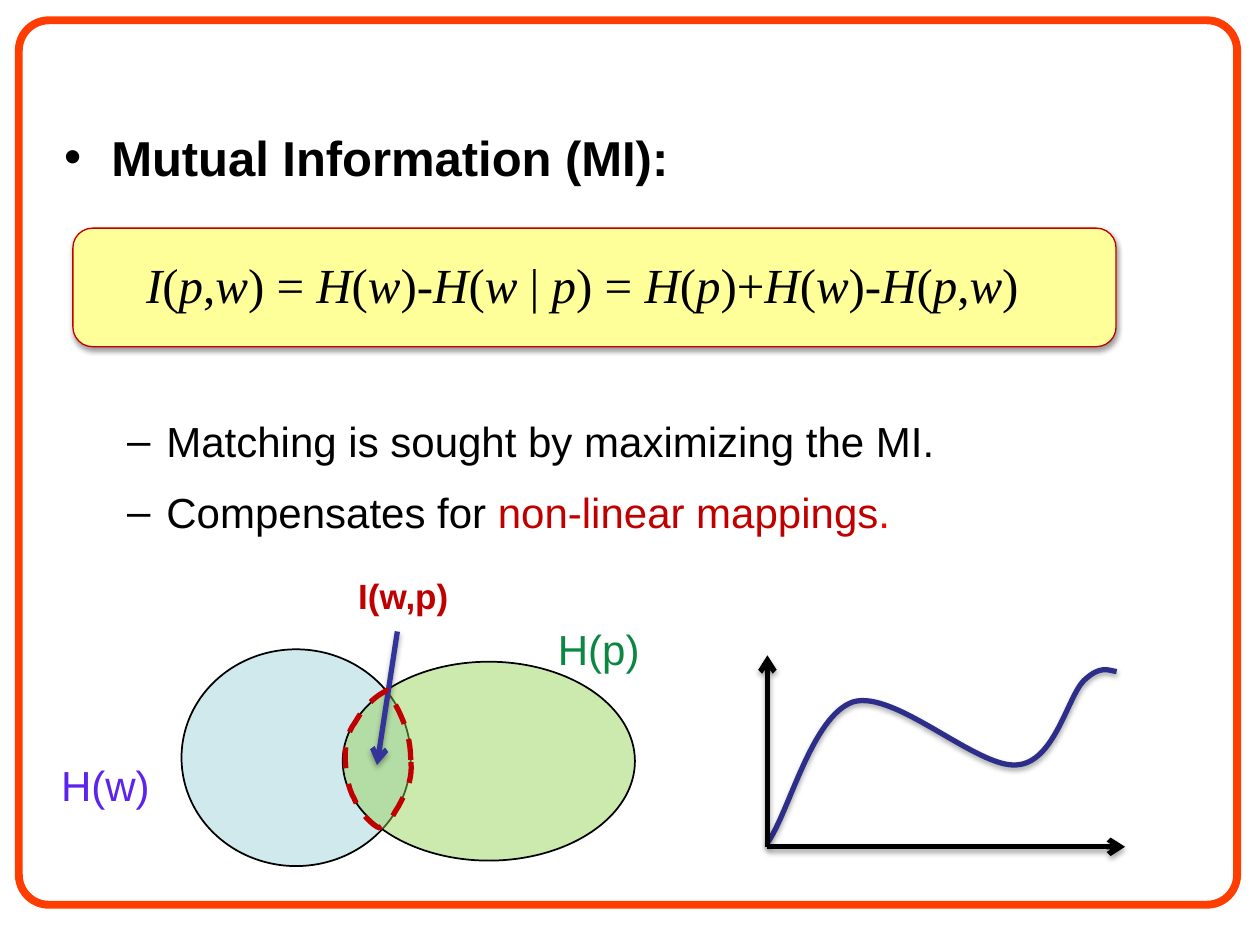
from dataclasses import dataclass
from itertools import groupby

from lxml import etree
from pptx import Presentation
from pptx import util as u
from pptx.dml.color import RGBColor
from pptx.enum import dml, shapes, text
from pptx.oxml import ns


@dataclass(frozen=True)
class Theme:
    """Colours, fonts and sizes of the slide."""
    ink: str = "000000"
    frame: str = "FF3D01"
    accent: str = "C00000"
    stop: str = "FF0000"
    panel: str = "FFFF99"
    word: str = "5D23ED"
    pixel: str = "0B8743"
    word_fill: str = "BBE0E3"
    pixel_fill: str = "92D050"
    curve: str = "2D2D8A"
    pointer: str = "333399"
    sans: str = "Arial"
    serif: str = "Times New Roman"
    heading: int = 28
    body: int = 24
    small: int = 20
    thick: float = 3


THEME = Theme()


def rgb(code):
    """Turn a hex code into a colour."""
    return RGBColor.from_string(code)


def sub(parent, tag, **attributes):
    """Append a drawing element to a parent."""
    return etree.SubElement(parent, ns.qn(f"a:{tag}"), {k: str(v) for k, v in attributes.items()})


def cast_shadow(item, alpha=None, distance=1.8):
    """Give an item a downward shadow, or none without alpha."""
    properties = item._element.spPr
    for effects in properties.findall(ns.qn("a:effectLst")):
        properties.remove(effects)
    effects = sub(properties, "effectLst")
    if alpha:
        shadow = sub(effects, "outerShdw", blurRad=u.Pt(3.1), dist=u.Pt(distance),
                     dir=90 * 60000, rotWithShape=0)
        sub(sub(shadow, "srgbClr", val=THEME.ink), "alpha", val=alpha * 1000)


def outline(item, color, width):
    """Set the line colour and width of an item."""
    item.line.color.rgb = rgb(color)
    item.line.width = u.Pt(width)


def write(paragraph, content, size=THEME.body, color=THEME.ink, font=THEME.sans,
          bold=False, italic=False):
    """Add a formatted run to a paragraph."""
    run = paragraph.add_run()
    run.text = content
    run.font.size, run.font.name = u.Pt(size), font
    run.font.bold, run.font.italic = bold, italic
    run.font.color.rgb = rgb(color)


def add_label(slide, box, wrap=False):
    """Add a centred text box and return its paragraph."""
    frame = slide.shapes.add_textbox(*map(u.Cm, box)).text_frame
    frame.word_wrap = wrap
    frame.paragraphs[0].alignment = text.PP_ALIGN.CENTER
    return frame.paragraphs[0]


def add_panel(slide, kind, box, color, width, fill=None, opacity=100):
    """Add a preset shape with an outline and an optional fill."""
    panel = slide.shapes.add_shape(kind, *map(u.Cm, box))
    panel.shadow.inherit = False
    if fill:
        panel.fill.solid()
        panel.fill.fore_color.rgb = rgb(fill)
        if opacity < 100:
            tint = panel._element.spPr.find(f".//{ns.qn('a:srgbClr')}")
            sub(tint, "alpha", val=opacity * 1000)
    else:
        panel.fill.background()
    outline(panel, color, width)
    return panel


def add_arrow(slide, start, end, color):
    """Add an arrow with a soft shadow."""
    arrow = slide.shapes.add_connector(shapes.MSO_CONNECTOR.STRAIGHT, *map(u.Cm, start + end))
    outline(arrow, color, THEME.thick)
    sub(arrow.line._get_or_add_ln(), "tailEnd", type="arrow")
    cast_shadow(arrow, 35)


def add_curve(slide, left, top, points, color, close=False):
    """Draw a Bezier outline from a start point and triples of points."""
    start, *rest = [(u.Cm(left + x), u.Cm(top + y)) for x, y in points]
    builder = slide.shapes.build_freeform(*start)
    builder.add_line_segments(rest, close=close)
    curve = builder.convert_to_shape()
    segments = list(curve._element.iter(ns.qn("a:lnTo")))
    for first, second, third in zip(*[iter(segments)] * 3):
        bezier = etree.Element(ns.qn("a:cubicBezTo"))
        first.addprevious(bezier)
        for segment in (first, second, third):
            bezier.append(segment[0])
            segment.getparent().remove(segment)
    curve.fill.background()
    outline(curve, color, THEME.thick)
    cast_shadow(curve)
    return curve


def add_frame(slide, box):
    """Draw the rounded border of the slide."""
    border = add_panel(slide, shapes.MSO_SHAPE.ROUNDED_RECTANGLE, box, THEME.frame, 4.5)
    border.adjustments[0] = 0.034


def fill_body(slide, box):
    """Fill the body placeholder with the heading and its points."""
    body = slide.placeholders[1]
    body.left, body.top, body.width, body.height = map(u.Cm, box)
    frame = body.text_frame
    frame.auto_size = text.MSO_AUTO_SIZE.NONE
    heading, matching, mappings = [frame.paragraphs[0]] + [frame.add_paragraph() for _ in range(2)]
    rows = ((heading, 0, "•", 0.95, -0.95, 6), (matching, 1, "–", 2.06, -0.79, 125),
            (mappings, 1, "–", 2.06, -0.79, 6))
    for paragraph, level, bullet, margin, indent, before in rows:
        paragraph.level = level
        paragraph.space_before, paragraph.space_after = u.Pt(before), u.Pt(6)
        properties = paragraph._p.get_or_add_pPr()
        properties.set("marL", str(u.Cm(margin)))
        properties.set("indent", str(u.Cm(indent)))
        sub(properties, "buChar", char=bullet)
    write(heading, "Mutual Information (MI):", size=THEME.heading, bold=True)
    write(matching, "Matching is sought by maximizing the MI.")
    write(mappings, "Compensates for ")
    write(mappings, "non-linear mappings", color=THEME.accent)
    write(mappings, ".", color=THEME.stop)


def add_formula(slide, box):
    """Set the formula on its highlighted panel, variables in italics."""
    left, top, width, height = box
    panel = add_panel(slide, shapes.MSO_SHAPE.ROUNDED_RECTANGLE, box, THEME.accent, 0.75, THEME.panel)
    cast_shadow(panel, 38, 1.6)
    formula = add_label(slide, (left - 0.17, top + 0.4, width - 0.15, 1.45), wrap=True)
    for variable, part in groupby("I(p,w) = H(w)-H(w | p) = H(p)+H(w)-H(p,w)", str.isalpha):
        write(formula, "".join(part), size=THEME.heading, font=THEME.serif, italic=variable)


def add_entropy_diagram(slide, box):
    """Draw the two overlapping entropies with their labels."""
    left, top, width, height = box
    for (x, y, w, h), fill, opacity in (((2.69, 1.63, 4.62, 4.37), THEME.word_fill, 68),
                                        ((5.94, 1.88, 5.89, 4.01), THEME.pixel_fill, 46)):
        add_panel(slide, shapes.MSO_SHAPE.OVAL, (left + x, top + y, w, h), THEME.ink, 1, fill, opacity)
    labels = (("H(w)", (0, 3.73, 2.31, 1.27), THEME.word, THEME.body, False),
              ("H(p)", (width - 2.18, 0.99, 2.18, 1.27), THEME.pixel, THEME.body, False),
              ("I(w,p)", (5.99, 0, 2.34, 1.12), THEME.accent, THEME.small, True))
    for name, (x, y, w, h), color, size, bold in labels:
        write(add_label(slide, (left + x, top + y, w, h)), name, size=size, color=color, bold=bold)
    add_arrow(slide, (left + 7.04, top + 1.27), (left + 6.63, top + 3.96), THEME.pointer)
    overlap = add_curve(slide, left + 5.99, top + 2.46, (
        (1.32, 1.4), (1.32, 0.89), (1.14, 0.46), (0.84, 0), (0.53, 0.15), (0.33, 0.41), (0.2, 0.64),
        (0.05, 0.84), (0, 1.07), (0, 1.32), (0, 1.6), (0.05, 1.96), (0.18, 2.18),
        (0.28, 2.44), (0.56, 2.74), (0.69, 2.77), (1.02, 2.51), (0.86, 2.67), (1.07, 2.34),
        (1.22, 2.06), (1.37, 1.8), (1.32, 1.4)), THEME.accent, close=True)
    overlap.line.dash_style = dml.MSO_LINE.DASH


def add_mapping_plot(slide, box):
    """Draw the non-linear mapping over its two axes."""
    left, top, width, height = box
    mapping = add_curve(slide, left, top, (
        (0, 3.78), (0.43, 3.2), (0.89, 1.22), (1.73, 0.94), (2.57, 0.69), (4.24, 2.29), (5.03, 2.21),
        (5.79, 2.16), (6.05, 0.84), (6.38, 0.51), (6.71, 0.2), (6.86, 0.3), (7.04, 0.33)), THEME.curve)
    cast_shadow(mapping, 35)
    origin = (left, top + height)
    for end in ((left + width, top + height), (left, top)):
        add_arrow(slide, origin, end, THEME.ink)


def main():
    """Build the slide and save it."""
    deck = Presentation()
    deck.slide_width, deck.slide_height = u.Cm(25.4), u.Cm(19.05)
    slide = deck.slides.add_slide(deck.slide_layouts[1])
    title = slide.shapes.title._element
    title.getparent().remove(title)
    add_frame(slide, (0.38, 0.41, 24.56, 17.83))
    fill_body(slide, (1.04, 2.44, 23.42, 15.01))
    add_formula(slide, (1.47, 4.6, 21.03, 2.39))
    add_entropy_diagram(slide, (0.97, 11.46, 12.19, 5.99))
    add_mapping_plot(slide, (15.47, 13.21, 7.21, 3.86))
    deck.save("out.pptx")


if __name__ == "__main__":
    main()
